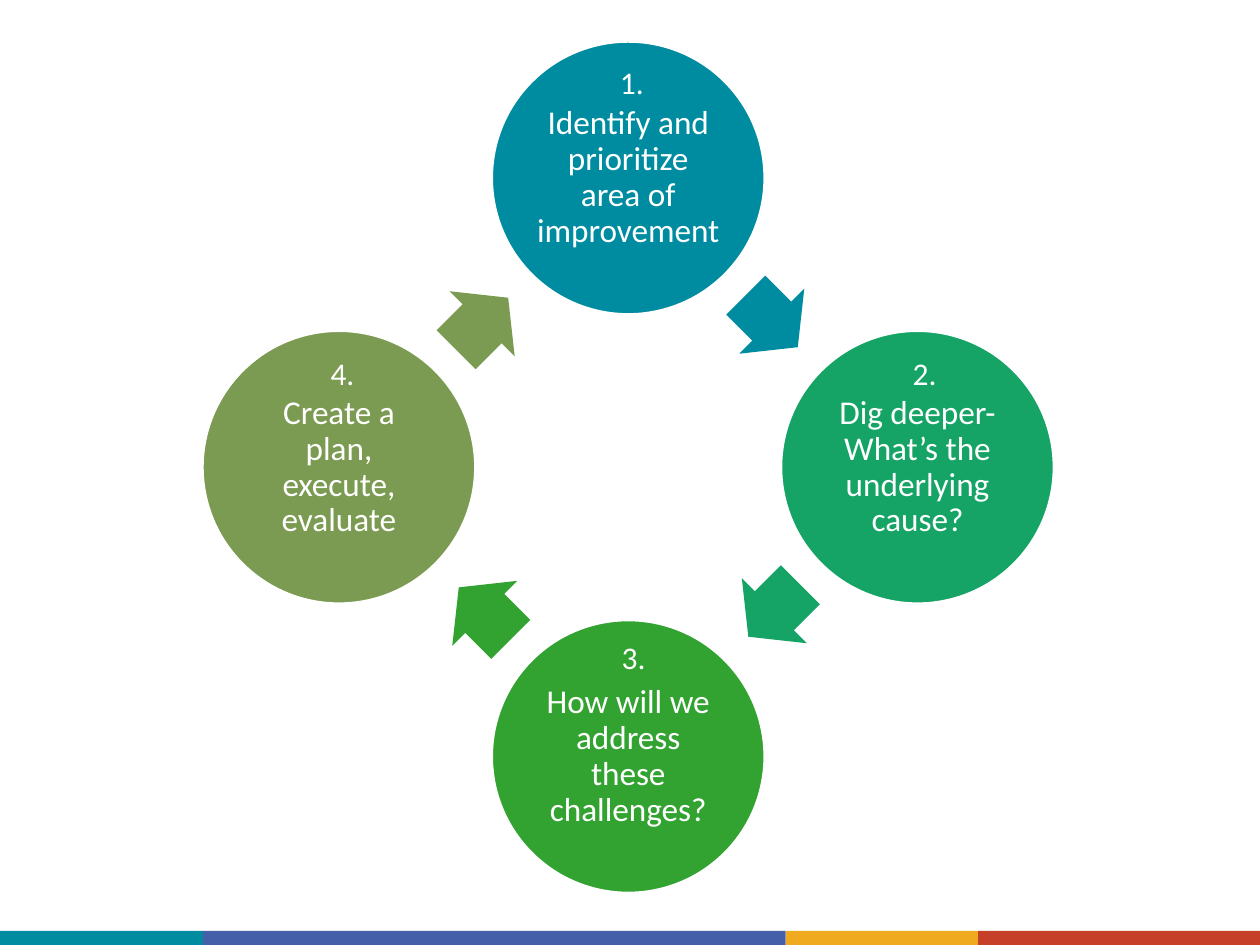
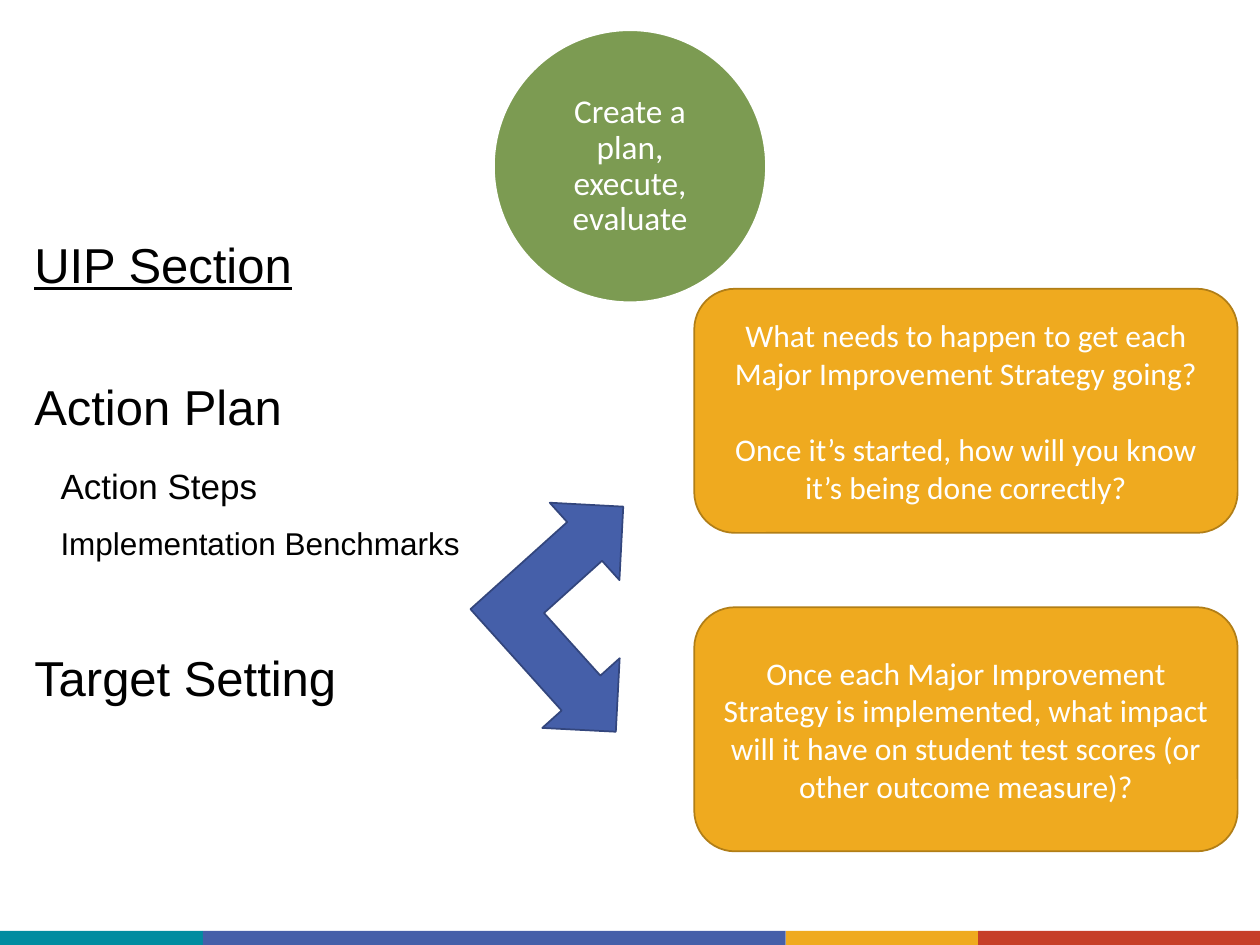
from math import cos, radians, sin

from pptx import Presentation
from pptx.dml.color import RGBColor
from pptx.enum.shapes import MSO_SHAPE as Shape
from pptx.enum.text import MSO_ANCHOR as Anchor, PP_ALIGN as Align
from pptx.util import Pt

WHITE, BLACK = "FFFFFF", "000000"
TEAL, MINT, GREEN, OLIVE = "008CA0", "15A465", "32A331", "7C9B52"
BLUE, NAVY, AMBER, BRONZE, RED = "455FA9", "33467D", "EFAA1F", "B17E17", "C63F28"
PLAN = "Create a plan, execute, evaluate"


def color(value):
    return RGBColor.from_string(value)


class Slides:
    bands = [(0, TEAL), (116, BLUE), (449, AMBER), (559, RED)]
    width, height, band_height = 720, 540, 8
    diameter, caption_size = 155.5, 110

    def __init__(self):
        self.deck = Presentation()
        self.deck.slide_width = Pt(self.width)
        self.deck.slide_height = Pt(self.height)
        self.page = None

    def new_page(self):
        self.page = self.deck.slides.add_slide(self.deck.slide_layouts[6])
        ends = [left for left, _ in self.bands[1:]] + [self.width]
        for (left, fill), end in zip(self.bands, ends):
            self.shape(Shape.RECTANGLE, left, self.height - self.band_height,
                       end - left, self.band_height, fill)

    def shape(self, kind, left, top, width, height, fill, line=None, turn=0):
        shape = self.page.shapes.add_shape(kind, Pt(left), Pt(top), Pt(width), Pt(height))
        shape.shadow.inherit = False
        shape.rotation = turn
        shape.fill.solid()
        shape.fill.fore_color.rgb = color(fill)
        if line:
            shape.line.color.rgb = color(line)
            shape.line.width = Pt(1)
        else:
            shape.line.fill.background()
        return shape

    def paragraph(self, frame, text, size, before=0, first=False, font="Calibri",
                  ink=WHITE, align=Align.CENTER, spacing=1.0, indent=0):
        para = frame.paragraphs[0] if first else frame.add_paragraph()
        para.text = text
        para.alignment = align
        para.line_spacing = spacing
        para.space_before = Pt(before)
        if indent:
            para._p.get_or_add_pPr().set("marL", str(Pt(indent)))
        para.font.name = font
        para.font.size = Pt(size)
        para.font.color.rgb = color(ink)
        return para

    def text_box(self, left, top, width, height, anchor=Anchor.TOP, inset=None):
        box = self.page.shapes.add_textbox(Pt(left), Pt(top), Pt(width), Pt(height))
        frame = box.text_frame
        frame.word_wrap = True
        frame.vertical_anchor = anchor
        if inset is not None:
            frame.margin_left = frame.margin_right = Pt(inset)
            frame.margin_top = frame.margin_bottom = Pt(inset)
        return frame

    def circle(self, x, y, text, fill):
        half, size = self.diameter / 2, self.caption_size
        self.shape(Shape.OVAL, x - half, y - half, self.diameter, self.diameter, fill, WHITE)
        frame = self.text_box(x - size / 2, y - size / 2, size, size, Anchor.MIDDLE, 2)
        self.paragraph(frame, text, 19, first=True, spacing=0.9)

    def number(self, x, y, text):
        frame = self.text_box(x - 20, y, 40, 29)
        self.paragraph(frame, text, 18, first=True)

    def arrow(self, x, y, fill, turn):
        width, height = 42, 52.5
        arrow = self.shape(Shape.RIGHT_ARROW, x - width / 2, y - height / 2,
                           width, height, fill, turn=turn)
        arrow.adjustments[0], arrow.adjustments[1] = 0.6, 0.5

    def question_card(self, top, questions):
        card = self.shape(Shape.ROUNDED_RECTANGLE, 396.75, top, 310.5, 139.5, AMBER, BRONZE)
        frame = card.text_frame
        frame.word_wrap = True
        frame.vertical_anchor = Anchor.MIDDLE
        for index, question in enumerate(questions):
            self.paragraph(frame, question, 18, before=22 if index else 0, first=index == 0)

    def outline(self, lines):
        frame = self.text_box(12.5, 134, 270, 342)
        for index, (text, size, before, indent) in enumerate(lines):
            para = self.paragraph(frame, text, size, before, index == 0, "Arial", BLACK,
                                  Align.LEFT, 0.9, indent)
            para.font.underline = index == 0


def cycle_page(slides):
    slides.new_page()
    center_x, center_y, ring, arrow_ring = 359, 267, 165.3, 117
    steps = [
        ("Identify and prioritize area of improvement", TEAL, 2, -69),
        ("Dig deeper- What’s the underlying cause?", MINT, 4, -68),
        ("How will we address these challenges?", GREEN, 3, -71),
        (PLAN, OLIVE, 2, -68),
    ]
    for index, (text, fill, shift, rise) in enumerate(steps):
        angle = radians(90 * index - 90)
        x, y = center_x + ring * cos(angle), center_y + ring * sin(angle)
        slides.circle(x, y, text, fill)
        slides.number(x + shift, y + rise, f"{index + 1}.")
        between = angle + radians(44.5)
        slides.arrow(center_x + arrow_ring * cos(between),
                     center_y + arrow_ring * sin(between), fill, 45 + 90 * index)


def plan_page(slides):
    slides.new_page()
    slides.circle(360, 95, PLAN, OLIVE)
    slides.outline([
        ("UIP Section", 28, 0, 0),
        ("Action Plan", 28, 51, 0),
        ("Action Steps", 20, 19, 15),
        ("Implementation Benchmarks", 18, 12, 15),
        ("Target Setting", 28, 53, 0),
    ])
    slides.question_card(165, [
        "What needs to happen to get each Major Improvement Strategy going?",
        "Once it’s started, how will you know it’s being done correctly?",
    ])
    slides.question_card(347, [
        "Once each Major Improvement Strategy is implemented, what impact will it "
        "have on student test scores (or other outcome measure)?",
    ])
    slides.shape(Shape.LEFT_UP_ARROW, 273.5, 291.5, 119, 122.5, BLUE, NAVY, 138)


def main():
    slides = Slides()
    cycle_page(slides)
    plan_page(slides)
    slides.deck.save("out.pptx")


if __name__ == "__main__":
    main()
